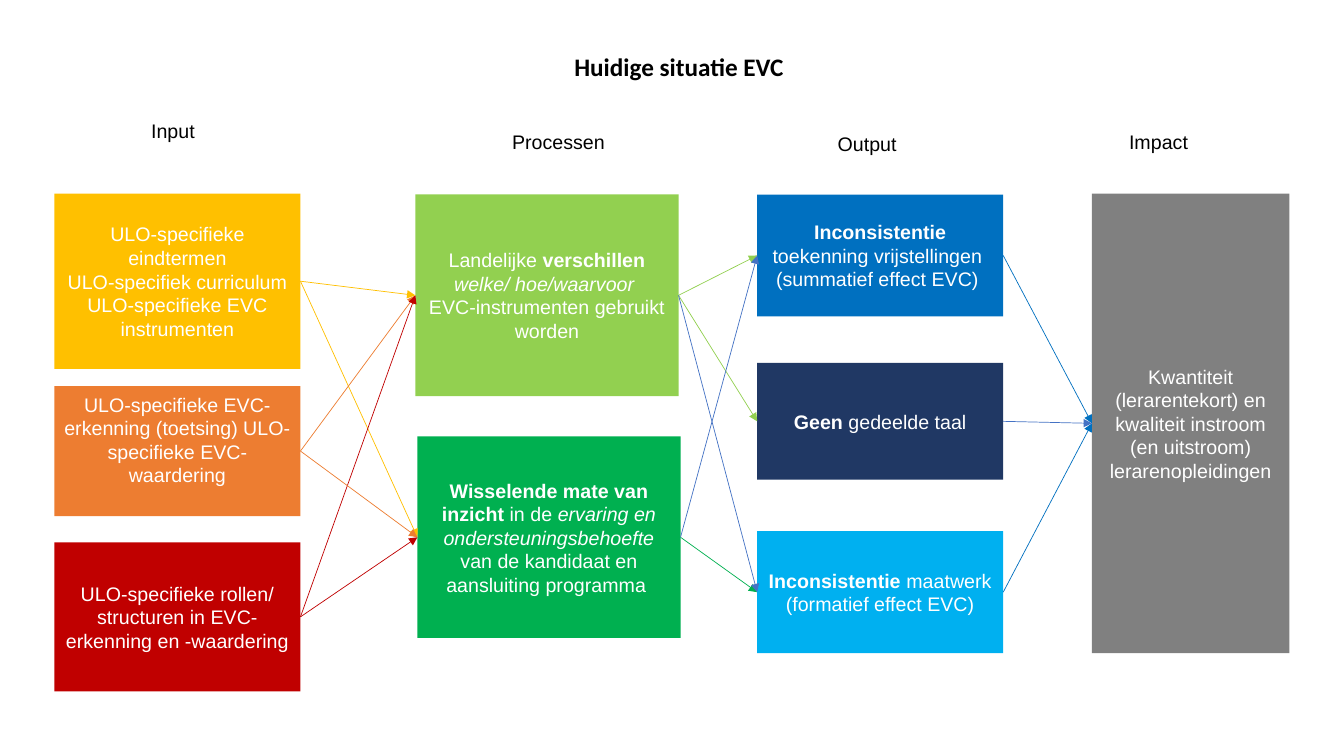
import pptx
import pptx.util
import pptx.dml.color
import pptx.enum.shapes
import pptx.enum.text
import pptx.oxml.ns
import lxml.etree

Inches = pptx.util.Inches
RGBColor = pptx.dml.color.RGBColor

WHITE = RGBColor(0xFF, 0xFF, 0xFF)
BLACK = RGBColor(0x00, 0x00, 0x00)
YELLOW = RGBColor(0xFF, 0xC0, 0x00)
ORANGE = RGBColor(0xED, 0x7D, 0x31)
RED = RGBColor(0xC0, 0x00, 0x00)
LIME = RGBColor(0x92, 0xD0, 0x50)
GREEN = RGBColor(0x00, 0xB0, 0x50)
BLUE = RGBColor(0x00, 0x70, 0xC0)
NAVY = RGBColor(0x20, 0x38, 0x64)
SKY = RGBColor(0x00, 0xB0, 0xF0)
GREY = RGBColor(0x80, 0x80, 0x80)
STEEL = RGBColor(0x44, 0x72, 0xC4)

LEFT_SITE, RIGHT_SITE = 1, 3
CENTER = pptx.enum.text.PP_ALIGN.CENTER

# Column header: text, left, top, width
HEADERS = [
    ("Input", 1.4, 1.13, 1.48),
    ("Processen", 4.98, 1.24, 1.48),
    ("Output", 8.21, 1.26, 1.31),
    ("Impact", 11.1, 1.24, 0.86),
]

# Box: name, (left, top, width, height), fill, paragraphs of (text, style) runs
BOXES = [
    ("eindtermen", (0.54, 1.92, 2.44, 1.74), YELLOW, [
        [("ULO-specifieke eindtermen", "")],
        [("ULO-specifiek curriculum", "")],
        [("ULO-specifieke EVC instrumenten", "")]]),
    ("erkenning", (0.54, 3.83, 2.44, 1.29), ORANGE, [
        [("ULO-specifieke EVC-erkenning (toetsing) ULO-specifieke EVC-waardering", "")]]),
    ("rollen", (0.54, 5.38, 2.44, 1.48), RED, [
        [("ULO-specifieke rollen/ structuren in EVC-erkenning en -waardering", "")]]),
    ("verschillen", (4.12, 1.93, 2.61, 2), LIME, [
        [("Landelijke ", ""), ("verschillen ", "b"), ("welke/ hoe/waarvoor \n", "i"),
         ("EVC-instrumenten gebruikt worden", "")]]),
    ("inzicht", (4.14, 4.33, 2.61, 2), GREEN, [
        [("Wisselende mate van inzicht ", "b"), ("in de ", ""),
         ("ervaring en ondersteuningsbehoefte", "i"),
         (" van de kandidaat en aansluiting programma ", "")]]),
    ("vrijstellingen", (7.51, 1.93, 2.44, 1.21), BLUE, [
        [("Inconsistentie ", "b"), ("toekenning vrijstellingen ", "")],
        [("(summatief effect EVC) ", "")]]),
    ("taal", (7.51, 3.6, 2.44, 1.16), NAVY, [
        [("Geen ", "b"), ("gedeelde taal", "")]]),
    ("maatwerk", (7.51, 5.27, 2.44, 1.21), SKY, [
        [("Inconsistentie", "b"), (" maatwerk ", "")],
        [("(formatief effect EVC)", "")]]),
    ("impact", (10.83, 1.92, 1.96, 4.56), GREY, [
        [("Kwantiteit (lerarentekort) en kwaliteit instroom (en uitstroom) "
          "lerarenopleidingen", "")]]),
]

# Arrow: from box, to box, colour
ARROWS = [
    ("eindtermen", "inzicht", YELLOW),
    ("erkenning", "verschillen", ORANGE),
    ("rollen", "verschillen", RED),
    ("verschillen", "vrijstellingen", LIME),
    ("inzicht", "maatwerk", GREEN),
    ("vrijstellingen", "impact", BLUE),
    ("maatwerk", "impact", BLUE),
    ("eindtermen", "verschillen", YELLOW),
    ("verschillen", "taal", LIME),
    ("taal", "impact", STEEL),
    ("erkenning", "inzicht", ORANGE),
    ("rollen", "inzicht", RED),
    ("inzicht", "vrijstellingen", STEEL),
    ("verschillen", "maatwerk", STEEL),
]


def set_font(font, name, size, color):
    font.name = name
    font.size = pptx.util.Pt(size)
    font.color.rgb = color


def add_label(slide, box, text, name="Arial", size=14):
    label = slide.shapes.add_textbox(*map(Inches, box))
    label.text_frame.word_wrap = True
    paragraph = label.text_frame.paragraphs[0]
    paragraph.text = text
    set_font(paragraph.font, name, size, BLACK)
    return paragraph


def add_title(slide, box):
    paragraph = add_label(slide, box, "Huidige situatie EVC", "Calibri", 18)
    paragraph.alignment = CENTER
    paragraph.font.bold = True


def add_box(slide, box, fill, paragraphs):
    shape = slide.shapes.add_shape(
        pptx.enum.shapes.MSO_SHAPE.RECTANGLE, *map(Inches, box))
    shape.shadow.inherit = False
    shape.fill.solid()
    shape.fill.fore_color.rgb = fill
    shape.line.fill.background()
    frame = shape.text_frame
    frame.word_wrap = True
    frame.vertical_anchor = pptx.enum.text.MSO_ANCHOR.MIDDLE
    for index, runs in enumerate(paragraphs):
        paragraph = frame.add_paragraph() if index else frame.paragraphs[0]
        paragraph.alignment = CENTER
        set_font(paragraph.font, "Arial", 14, WHITE)
        for text, style in runs:
            run = paragraph.add_run()
            run.text = text.rstrip("\n")
            if style:
                run.font.bold = style == "b"
                run.font.italic = style == "i"
            if text.endswith("\n"):
                paragraph.add_line_break()
    return shape


def add_arrow(slide, source, target, color):
    arrow = slide.shapes.add_connector(
        pptx.enum.shapes.MSO_CONNECTOR.STRAIGHT, 0, 0, 0, 0)
    arrow.begin_connect(source, RIGHT_SITE)
    arrow.end_connect(target, LEFT_SITE)
    arrow.line.color.rgb = color
    arrow.line.width = pptx.util.Pt(0.5)
    # Arrowhead, and no shadow
    qn = pptx.oxml.ns.qn
    lxml.etree.SubElement(arrow.line._get_or_add_ln(), qn("a:tailEnd"), type="triangle")
    lxml.etree.SubElement(arrow._element.spPr, qn("a:effectLst"))


def build_slide(presentation):
    slide = presentation.slides.add_slide(presentation.slide_layouts[6])
    # Title and column headers
    add_title(slide, (4.23, 0.46, 5.01, 0.4))
    for text, left, top, width in HEADERS:
        add_label(slide, (left, top, width, 0.34), text)
    # Boxes
    shapes = {name: add_box(slide, box, fill, paragraphs)
              for name, box, fill, paragraphs in BOXES}
    # This text sits half a line above the middle
    shapes["erkenning"].text_frame.margin_bottom = Inches(0.28)
    # Arrows
    for source, target, color in ARROWS:
        add_arrow(slide, shapes[source], shapes[target], color)


def main():
    presentation = pptx.Presentation()
    presentation.slide_width = Inches(13.33)
    presentation.slide_height = Inches(7.5)
    build_slide(presentation)
    presentation.save("out.pptx")


if __name__ == "__main__":
    main()
